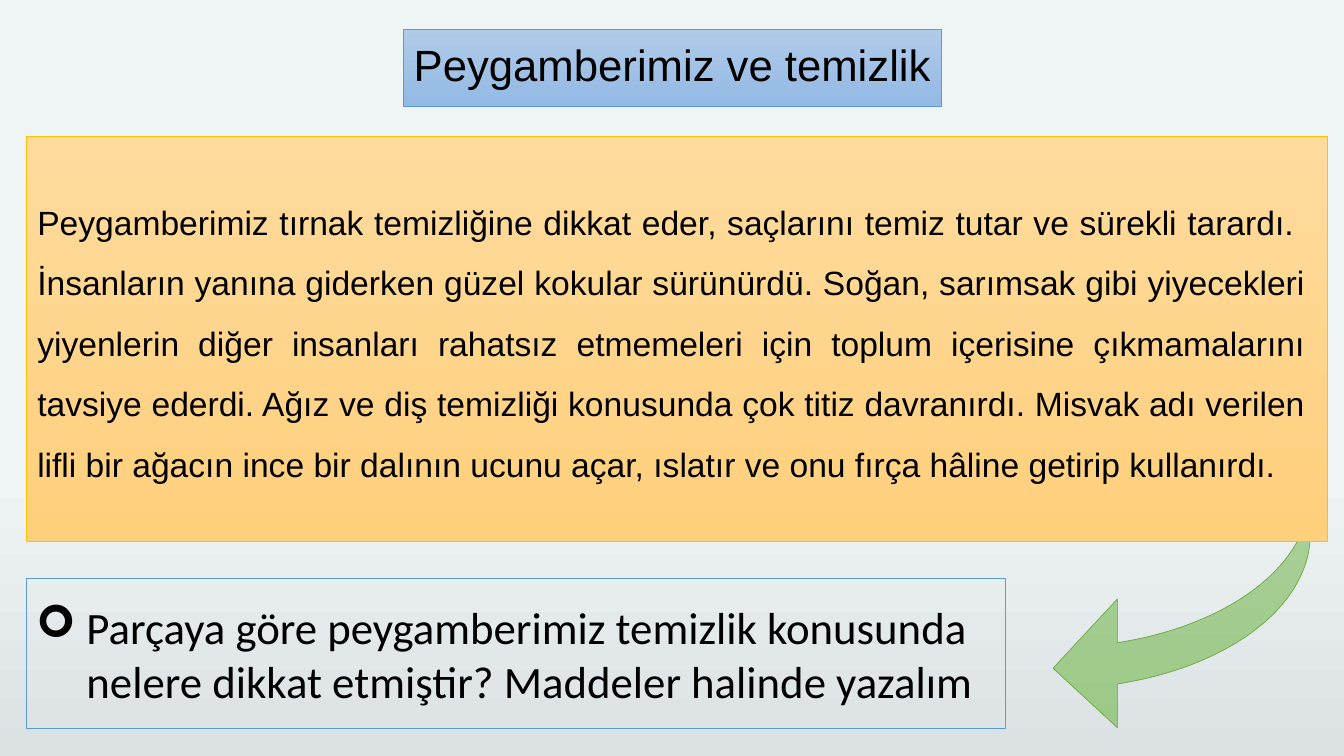
import pptx
import pptx.util
import pptx.dml.color
import pptx.enum.shapes
import pptx.enum.text
import lxml.etree

Cm = pptx.util.Cm
Pt = pptx.util.Pt
RGB = pptx.dml.color.RGBColor
KIND = pptx.enum.shapes.MSO_SHAPE
ALIGN = pptx.enum.text.PP_ALIGN
ANCHOR = pptx.enum.text.MSO_ANCHOR

BLACK = RGB(0x00, 0x00, 0x00)
MIST, GREY = RGB(0xEF, 0xF4, 0xF5), RGB(0xDC, 0xE1, 0xE4)
GREEN = RGB(0x70, 0xAD, 0x47)
GREENS = RGB(0xB5, 0xD5, 0xA7), RGB(0x9C, 0xC9, 0x87)
BLUE = RGB(0x5B, 0x9B, 0xD5)
BLUES = RGB(0xB1, 0xCB, 0xE9), RGB(0x93, 0xB9, 0xE4)
GOLD = RGB(0xFF, 0xC0, 0x00)
GOLDS = RGB(0xFF, 0xDB, 0x9E), RGB(0xFF, 0xD0, 0x7C)


def shade(fill, top, base, start=0):
    """Fill from top colour down to base colour."""
    fill.gradient()
    fill.gradient_angle = 270
    for stop, tone, place in zip(fill.gradient_stops, (top, base), (start, 1)):
        stop.color.rgb = tone
        stop.position = place


def write(shape, text, font, size, align):
    """Put one paragraph in a shape and return it."""
    para = shape.text_frame.paragraphs[0]
    para.alignment = align
    run = para.add_run()
    run.text = text
    run.font.name = font
    run.font.size = Pt(size)
    run.font.color.rgb = BLACK
    return para


# Slide and background
deck = pptx.Presentation()
deck.slide_width, deck.slide_height = Cm(33.87), Cm(19.05)
slide = deck.slides.add_slide(deck.slide_layouts[6])
shade(slide.background.fill, MIST, GREY, 0.62)

# Framed shapes, from back to front
frames = [
    (KIND.CURVED_LEFT_ARROW, (26.54, 8.53, 6.48, 9.93), GREENS, GREEN),
    (KIND.RECTANGLE, (10.16, 0.74, 13.56, 1.93), BLUES, BLUE),
    (KIND.RECTANGLE, (0.66, 3.43, 32.79, 10.21), GOLDS, GOLD),
    (KIND.RECTANGLE, (0.66, 14.58, 24.69, 3.78), None, BLUE),
]
shapes = []
for kind, place, tones, edge in frames:
    shape = slide.shapes.add_shape(kind, *map(Cm, place))
    shape.shadow.inherit = False
    if tones:
        shade(shape.fill, *tones)
    else:
        shape.fill.background()
    shape.line.color.rgb = edge
    shape.line.width = Pt(0.5)
    shapes.append(shape)
arrow, title, panel, task = shapes
arrow.adjustments[0] = 0.16

# Title
title.text_frame.word_wrap = False
title.text_frame.vertical_anchor = ANCHOR.MIDDLE
para = write(title, "Peygamberimiz ve temizlik", "Arial", 31.2, ALIGN.CENTER)
para.line_spacing = 0.9

# Question with arrow bullet
task.text_frame.word_wrap = True
task.text_frame.vertical_anchor = ANCHOR.MIDDLE
para = write(task, "Parçaya göre peygamberimiz temizlik konusunda nelere dikkat "
             "etmiştir? Maddeler halinde yazalım", "Calibri", 32, ALIGN.LEFT)
props = para._p.get_or_add_pPr()
props.set("marL", str(Cm(1.27)))
props.set("indent", str(-Cm(1.27)))
space = "{http://schemas.openxmlformats.org/drawingml/2006/main}"
lxml.etree.SubElement(props, space + "buFont", typeface="Wingdings")
lxml.etree.SubElement(props, space + "buChar", char="➢")

# Reading passage
story = slide.shapes.add_textbox(Cm(0.69), Cm(4.45), Cm(32.44), Cm(7.95))
story.text_frame.word_wrap = True
para = write(
    story,
    "Peygamberimiz tırnak temizliğine dikkat eder, saçlarını temiz tutar ve "
    "sürekli tarardı.  İnsanların yanına giderken güzel kokular sürünürdü. "
    "Soğan, sarımsak gibi yiyecekleri yiyenlerin diğer insanları rahatsız "
    "etmemeleri için toplum içerisine çıkmamalarını tavsiye ederdi. Ağız ve "
    "diş temizliği konusunda çok titiz davranırdı. Misvak adı verilen lifli "
    "bir ağacın ince bir dalının ucunu açar, ıslatır ve onu fırça hâline "
    "getirip kullanırdı.",
    "Arial", 24, ALIGN.JUSTIFY)
para.line_spacing = 1.5

deck.save("out.pptx")
